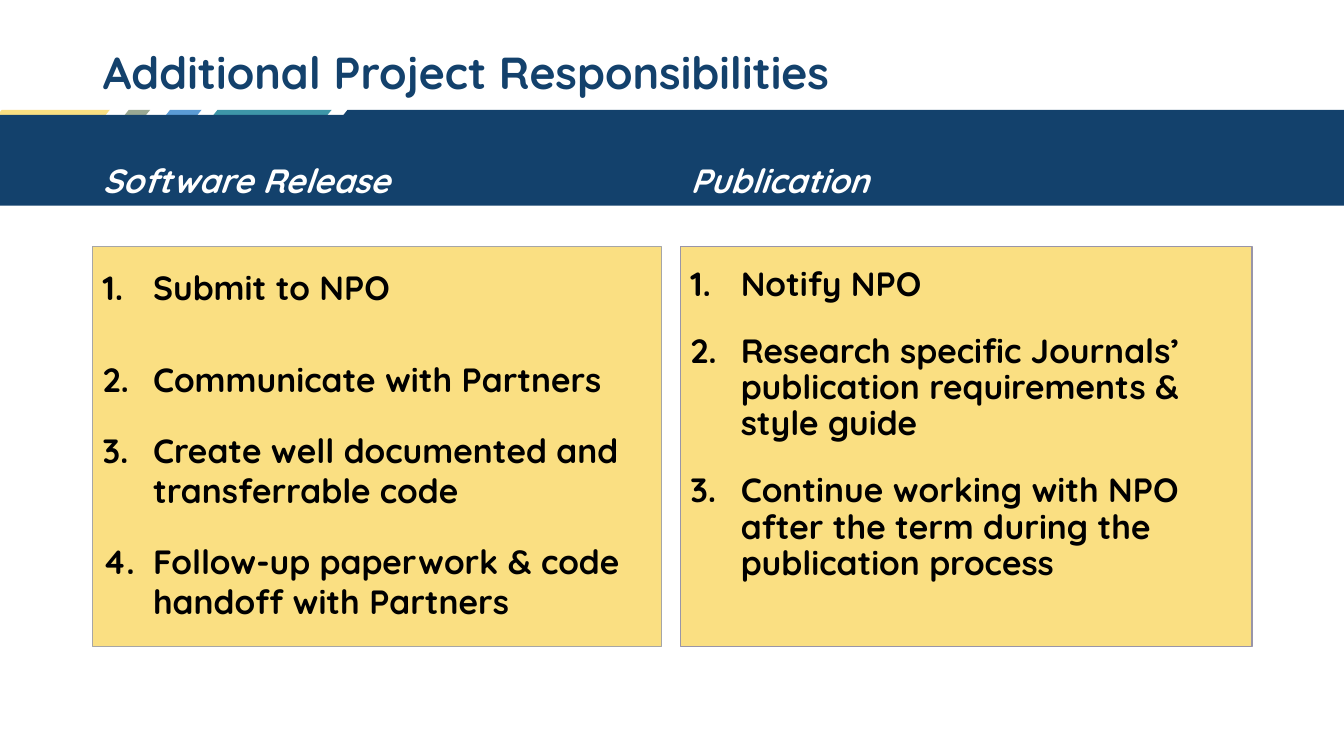
"""Build the slide on additional project responsibilities."""
from dataclasses import dataclass

from lxml import etree
from pptx import Presentation
from pptx.dml.color import RGBColor
from pptx.enum.shapes import MSO_SHAPE
from pptx.enum.text import MSO_ANCHOR, MSO_AUTO_SIZE, PP_ALIGN
from pptx.oxml.ns import qn
from pptx.util import Inches, Pt

RECT, SLANT = MSO_SHAPE.RECTANGLE, MSO_SHAPE.PARALLELOGRAM
TOP, MID, LOW = MSO_ANCHOR.TOP, MSO_ANCHOR.MIDDLE, MSO_ANCHOR.BOTTOM
LEFT, FIXED = PP_ALIGN.LEFT, MSO_AUTO_SIZE.NONE


@dataclass(frozen=True)
class Theme:
    """Colours, font and type sizes."""
    font: str = "Quicksand"
    navy: str = "13416C"
    gold: str = "FADF82"
    sage: str = "99A893"
    blue: str = "5B9BD5"
    teal: str = "3E96A8"
    white: str = "FFFFFF"
    black: str = "000000"
    title: int = 32
    body: int = 24


@dataclass(frozen=True)
class Box:
    """A place on a grid of 100 columns and 100 rows."""
    col: float
    row: float
    wide: float
    high: float


@dataclass(frozen=True)
class Strip:
    """One slanted piece of the accent line."""
    col: float
    wide: float
    fill: str


@dataclass(frozen=True)
class Item:
    """A numbered step with its line spacing."""
    text: str
    line: float


@dataclass(frozen=True)
class Panel:
    """A heading in the band and the numbered box below it."""
    head: str
    col: float
    wide: float
    edge: str
    items: tuple[Item, ...]


LOOK = Theme()
STRIPS = (
    Strip(-0.23, 8.4, LOOK.gold),
    Strip(9.23, 1.95, LOOK.sage),
    Strip(12.3, 2.7, LOOK.blue),
    Strip(15.83, 8.85, LOOK.teal),
    Strip(25.5, 74.85, LOOK.navy),
)
PANELS = (
    Panel("Software Release", 6.9, 42.3, "A6A6A6", (
        Item("Submit to NPO", 1),
        Item("Communicate with Partners", 1.5),
        Item("Create well documented and transferrable code", 1),
        Item("Follow-up paperwork & code handoff with Partners", 1),
    )),
    Panel("Publication", 50.63, 42.53, "9995A8", (
        Item("Notify NPO", 0.9),
        Item("Research specific Journals’ publication requirements & style guide", 0.9),
        Item("Continue working with NPO after the term during the publication process", 0.9),
    )),
)

deck = Presentation()
deck.slide_width, deck.slide_height = Inches(13.33), Inches(7.5)
slide = deck.slides.add_slide(deck.slide_layouts[5])


def place(box: Box) -> tuple[int, int, int, int]:
    """Turn grid units into slide lengths."""
    unit, step = deck.slide_width / 100, deck.slide_height / 100
    return (round(box.col * unit), round(box.row * step),
            round(box.wide * unit), round(box.high * step))


def draw(kind: MSO_SHAPE, box: Box, fill: str):
    """Add a flat filled shape without a line."""
    shape = slide.shapes.add_shape(kind, *place(box))
    shape.shadow.inherit = False
    shape.fill.solid()
    shape.fill.fore_color.rgb = RGBColor.from_string(fill)
    shape.line.fill.background()
    return shape


def set_frame(shape, anchor: MSO_ANCHOR):
    """Prepare a wrapping text frame and return it."""
    frame = shape.text_frame
    frame.word_wrap, frame.auto_size = True, FIXED
    frame.vertical_anchor = anchor
    frame.margin_left = frame.margin_right = Inches(0.1)
    frame.margin_top = frame.margin_bottom = Inches(0.05)
    return frame


def style(para, size: int, hue: str, line: float, slope: bool = False) -> None:
    """Format one paragraph in the bold theme font."""
    para.alignment, para.line_spacing = LEFT, line
    font = para.font
    font.name, font.size = LOOK.font, Pt(size)
    font.bold, font.italic = True, slope
    font.color.rgb = RGBColor.from_string(hue)


def number(para) -> None:
    """Give a paragraph a hanging number."""
    props = para._p.get_or_add_pPr()
    props.set("marL", str(Inches(0.5)))
    props.set("indent", str(Inches(-0.5)))
    etree.SubElement(props, qn("a:buFont"), typeface=LOOK.font)
    etree.SubElement(props, qn("a:buAutoNum"), type="arabicPeriod")


def add_title(text: str) -> None:
    """Move and format the title placeholder."""
    title = slide.shapes.title
    title.left, title.top, title.width, title.height = place(Box(6.9, 5.33, 86.27, 9.2))
    frame = set_frame(title, MID)
    frame.text = text
    style(frame.paragraphs[0], LOOK.title, LOOK.navy, 0.9)


def add_panel(panel: Panel) -> None:
    """Draw a heading and its numbered box."""
    head = slide.shapes.add_textbox(*place(Box(panel.col, 15.2, panel.wide, 12)))
    frame = set_frame(head, LOW)
    frame.text = panel.head
    style(frame.paragraphs[0], LOOK.body, LOOK.white, 0.9, True)

    card = draw(RECT, Box(panel.col, 32.67, panel.wide, 52.8), LOOK.gold)
    card.line.color.rgb = RGBColor.from_string(panel.edge)
    card.line.width = Pt(0.75)
    frame = set_frame(card, TOP)
    frame.margin_top = Inches(0.2)
    frame.text = "\n".join(item.text for item in panel.items)
    for rank, (para, item) in enumerate(zip(frame.paragraphs, panel.items)):
        number(para)
        style(para, LOOK.body, LOOK.black, item.line)
        para.space_before = Pt(10 if rank else 0)
        para.space_after = Pt(12 if rank < len(panel.items) - 1 else 0)


def main() -> None:
    """Draw the slide and save it."""
    for strip in STRIPS:
        piece = draw(SLANT, Box(strip.col, 14.53, strip.wide, 0.8), strip.fill)
        piece.adjustments[0] = 0.8
    draw(RECT, Box(0, 15.2, 100, 12), LOOK.navy)
    add_title("Additional Project Responsibilities")
    for panel in PANELS:
        add_panel(panel)
    deck.save("out.pptx")


if __name__ == "__main__":
    main()
